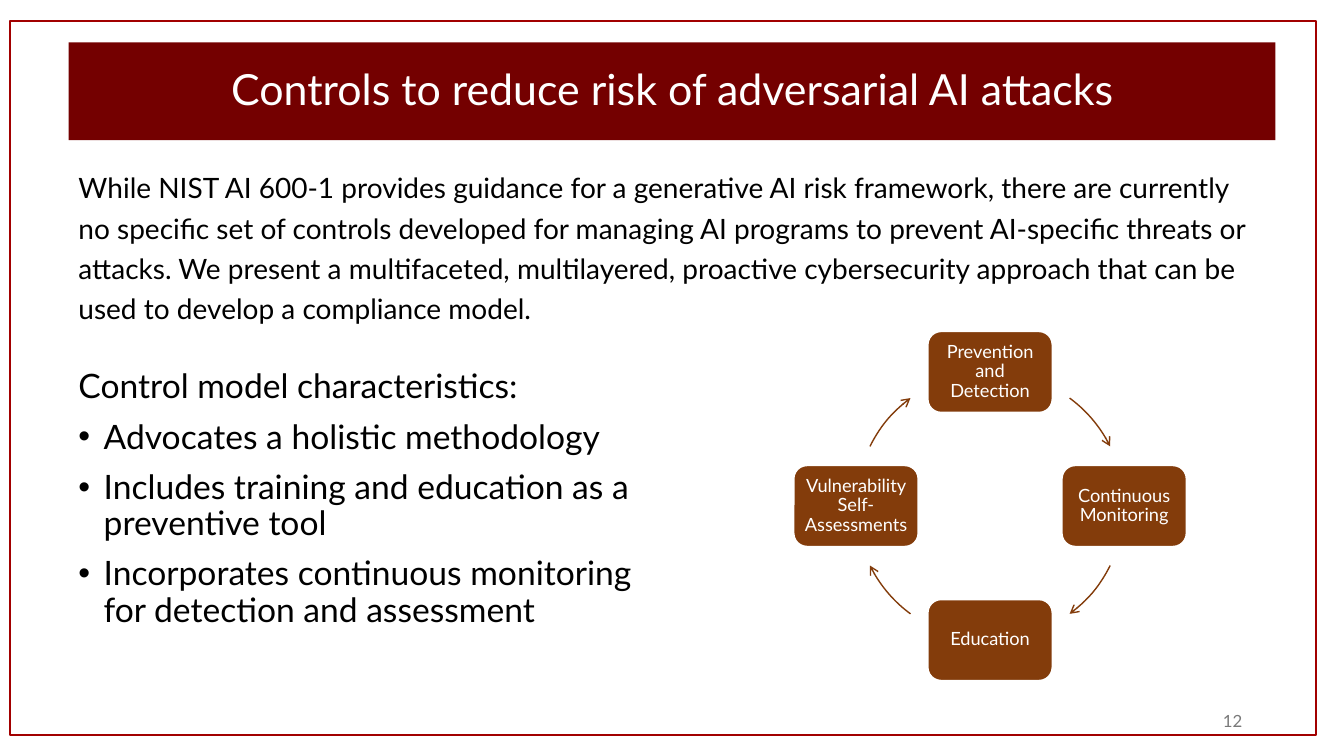
"""Build the slide on controls that reduce the risk of adversarial AI attacks."""
from dataclasses import dataclass

from lxml.etree import SubElement as Sub
from pptx import Presentation as Deck
from pptx.dml.color import RGBColor as Rgb
from pptx.enum.shapes import MSO_SHAPE as Kind
from pptx.enum.text import MSO_ANCHOR as Anchor, PP_ALIGN as Align
from pptx.oxml.ns import qn
from pptx.shapes.autoshape import Shape
from pptx.slide import Slide
from pptx.util import Inches, Pt

FONT = "Lato"
HUES = {
    "title": "740000",
    "frame": "A20000",
    "node": "833C0B",
    "white": "FFFFFF",
    "black": "000000",
    "gray": "797979",
}
MID_X, MID_Y, RING = 9.82, 5.02, 1.33
NODE_W, NODE_H = 1.24, 0.81
SWEEP = 27.2


@dataclass
class Box:
    x: float
    y: float
    w: float
    h: float


@dataclass
class Style:
    size: float
    hue: str
    align: Align = Align.LEFT
    lead: float = 1.0
    before: float = 0
    anchor: Anchor = Anchor.TOP
    inset: float = 0.1
    rim: float = 0.05


@dataclass
class Line:
    text: str
    dot: bool = False


@dataclass
class Node:
    text: str
    dx: int
    dy: int
    turn: float


TITLE = Style(30.6, "white", Align.CENTER, 0.9, 10, Anchor.MIDDLE)
INTRO = Style(20, "black", lead=1.2)
LIST = Style(24, "black", lead=0.9, before=10)
LABEL = Style(13, "white", Align.CENTER, 0.9, 0, Anchor.MIDDLE, 0.04, 0.04)
PAGE = Style(12, "gray", Align.RIGHT, anchor=Anchor.MIDDLE)

LEAD = [Line(
    "While NIST AI 600-1 provides guidance for a generative AI risk framework, "
    "there are currently no specific set of controls developed for managing AI "
    "programs to prevent AI-specific threats or attacks. We present a "
    "multifaceted, multilayered, proactive cybersecurity approach that can be "
    "used to develop a compliance model."
)]
TRAITS = [
    Line("Control model characteristics:"),
    Line("Advocates a holistic methodology", True),
    Line("Includes training and education as a preventive tool", True),
    Line("Incorporates continuous monitoring for detection and assessment", True),
]
NODES = [
    Node("Prevention and Detection", 0, -1, 320),
    Node("Continuous Monitoring", 1, 0, 40),
    Node("Education", 0, 1, 140),
    Node("Vulnerability Self-Assessments", -1, 0, 220),
]


def color(name: str) -> Rgb:
    return Rgb.from_string(HUES[name])


def write(shape: Shape, lines: list[Line], style: Style) -> None:
    frame = shape.text_frame
    frame.word_wrap = True
    frame.vertical_anchor = style.anchor
    frame.margin_left = frame.margin_right = Inches(style.inset)
    frame.margin_top = frame.margin_bottom = Inches(style.rim)
    for i, line in enumerate(lines):
        para = frame.add_paragraph() if i else frame.paragraphs[0]
        para.text = line.text
        para.alignment = style.align
        para.line_spacing = style.lead
        para.space_before = Pt(style.before)
        if line.dot:
            props = para._p.get_or_add_pPr()
            props.set("marL", str(Inches(0.25)))
            props.set("indent", str(Inches(-0.25)))
            Sub(props, qn("a:buFont"), typeface="Arial")
            Sub(props, qn("a:buChar"), char="•")
        para.font.name = FONT
        para.font.size = Pt(style.size)
        para.font.color.rgb = color(style.hue)


def draw(slide: Slide, kind: Kind, box: Box, fill: str = "",
         edge: str = "", width: float = 1.5) -> Shape:
    shape = slide.shapes.add_shape(
        kind, Inches(box.x), Inches(box.y), Inches(box.w), Inches(box.h))
    shape.shadow.inherit = False
    if fill:
        shape.fill.solid()
        shape.fill.fore_color.rgb = color(fill)
    else:
        shape.fill.background()
    if edge:
        shape.line.color.rgb = color(edge)
        shape.line.width = Pt(width)
    else:
        shape.line.fill.background()
    return shape


def note(slide: Slide, box: Box, lines: list[Line], style: Style) -> None:
    shape = slide.shapes.add_textbox(
        Inches(box.x), Inches(box.y), Inches(box.w), Inches(box.h))
    write(shape, lines, style)


def cycle(slide: Slide, nodes: list[Node]) -> None:
    ring = Box(MID_X - RING, MID_Y - RING, 2 * RING, 2 * RING)
    for node in nodes:
        box = Box(MID_X + node.dx * RING - NODE_W / 2,
                  MID_Y + node.dy * RING - NODE_H / 2, NODE_W, NODE_H)
        card = draw(slide, Kind.ROUNDED_RECTANGLE, box, "node", "white")
        write(card, [Line(node.text)], LABEL)
        arc = draw(slide, Kind.ARC, ring, edge="node", width=1)
        for i, side in enumerate((-1, 1)):
            arc.adjustments[i] = (node.turn + side * SWEEP / 2) * 0.6
        Sub(arc.line._get_or_add_ln(), qn("a:tailEnd"), type="arrow")


def main() -> None:
    deck = Deck()
    deck.slide_width, deck.slide_height = Inches(13.33), Inches(7.5)
    slide = deck.slides.add_slide(deck.slide_layouts[6])
    banner = draw(slide, Kind.RECTANGLE, Box(0.68, 0.42, 11.97, 0.97), "title")
    write(banner, [Line("Controls to reduce risk of adversarial AI attacks")], TITLE)
    draw(slide, Kind.RECTANGLE, Box(0.1, 0.21, 12.95, 7.08), edge="frame")
    note(slide, Box(9.42, 6.95, 3, 0.4), [Line("12")], PAGE)
    note(slide, Box(0.68, 1.58, 11.97, 1.85), LEAD, INTRO)
    cycle(slide, NODES)
    note(slide, Box(0.68, 3.62, 6.08, 3.13), TRAITS, LIST)
    deck.save("out.pptx")


if __name__ == "__main__":
    main()
